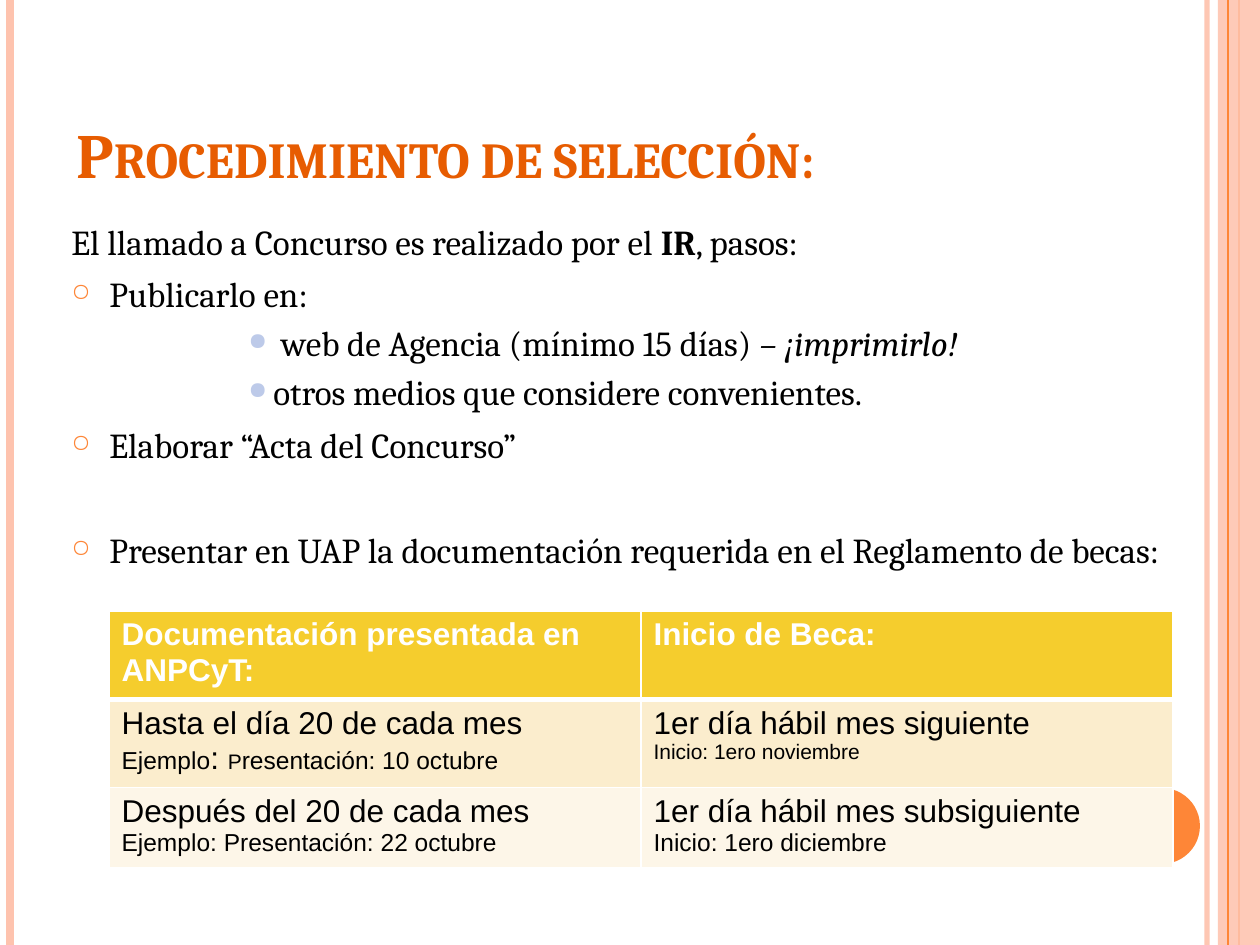
from lxml import etree
from pptx import Presentation
from pptx.dml.color import RGBColor
from pptx.enum.shapes import MSO_CONNECTOR, MSO_SHAPE
from pptx.enum.text import MSO_ANCHOR, MSO_AUTO_SIZE, PP_ALIGN
from pptx.oxml.ns import qn
from pptx.util import Pt

STRAIGHT = MSO_CONNECTOR.STRAIGHT
RECTANGLE, OVAL = MSO_SHAPE.RECTANGLE, MSO_SHAPE.OVAL
BOTTOM, LEFT, NO_FIT = MSO_ANCHOR.BOTTOM, PP_ALIGN.LEFT, MSO_AUTO_SIZE.NONE
PX = 914400 / 126
COLORS = {
    "orange": "FE8637", "pink": "FEC3AE", "title": "E75C01", "text": "000000",
    "white": "FFFFFF", "dot": "BDCAE9", "header": "F5CD2D",
    "odd": "FBEDCD", "even": "FDF6E8",
}


def px(*lengths):
    return [round(length * PX) for length in lengths]


def add_text(paragraph, text, font="Cambria", size=20, color="text",
             bold=False, italic=False, small_caps=False):
    run = paragraph.add_run()
    run.text = text
    run.font.name = font
    run.font.size = Pt(size)
    run.font.bold = bold
    run.font.italic = italic
    run.font.color.rgb = RGBColor.from_string(COLORS[color])
    if small_caps:
        run.font._element.set("cap", "small")


prs = Presentation()
prs.slide_width, prs.slide_height = px(1260, 945)
slide = prs.slides.add_slide(prs.slide_layouts[5])
shapes = slide.shapes

stripes = [(1207, "pink", 3, 93), (10, "pink", 4.5, 100),
           (1239, "orange", 1.5, 100), (1228, "orange", 0.75, 100)]
band_and_disc = [(RECTANGLE, (1218, 0, 42, 945), "pink", 87),
                 (OVAL, (1124, 788, 76, 76), "orange", 100)]
decorations = []
for x, color, width, opacity in stripes[:3]:
    decorations.append(("stripe", x, color, width, opacity))
decorations.append(("area", *band_and_disc[0]))
decorations.append(("stripe", *stripes[3]))
decorations.append(("area", *band_and_disc[1]))

for kind, *details in decorations:
    if kind == "stripe":
        x, color, width, opacity = details
        stripe = shapes.add_connector(STRAIGHT, *px(x, 0, x, 945))
        stripe.line.width = Pt(width)
        paint = stripe.line.fill
        etree.SubElement(stripe._element.spPr, qn("a:effectLst"))
        holder = stripe.line._get_or_add_ln()
    else:
        preset, box, color, opacity = details
        area = shapes.add_shape(preset, *px(*box))
        area.shadow.inherit = False
        area.line.fill.background()
        paint = area.fill
        holder = area._element.spPr
    paint.solid()
    paint.fore_color.rgb = RGBColor.from_string(COLORS[color])
    if opacity < 100:
        tint = holder.find(qn("a:solidFill"))[0]
        etree.SubElement(tint, qn("a:alpha"), val=str(opacity * 1000))

title = shapes.title
title.left, title.top, title.width, title.height = px(64, 39, 1148, 158)
title.text_frame.auto_size = NO_FIT
title.text_frame.word_wrap = True
title.text_frame.vertical_anchor = BOTTOM
heading = title.text_frame.paragraphs[0]
heading.alignment = LEFT
add_text(heading, "Procedimiento de selección:", size=36, color="title",
         bold=True, small_caps=True)

BULLETS = {
    "intro": (38, -38, None, None, None),
    "step": (38, -38, "○", "orange", 70),
    "detail": (202, -25, "●", "dot", 68),
}
steps = [
    ("intro", 6, [("El llamado a Concurso es realizado por el ", {}),
                  ("IR", {"bold": True}), (", pasos:", {})]),
    ("step", 6, [("Publicarlo en:", {})]),
    ("detail", 4, [(" web de Agencia (mínimo 15 días) ", {}),
                   ("– ¡imprimirlo!", {"italic": True})]),
    ("detail", 4, [("otros medios que considere convenientes.", {})]),
    ("step", 6, [("Elaborar “Acta del Concurso”", {})]),
    ("step", 36, [("Presentar en UAP la documentación requerida en el "
                   "Reglamento de becas:", {})]),
]
body = shapes.add_textbox(*px(59, 214, 1148, 682)).text_frame
body.word_wrap = True
for i, (level, gap, runs) in enumerate(steps):
    paragraph = body.add_paragraph() if i else body.paragraphs[0]
    paragraph.space_before = Pt(gap)
    margin, indent, mark, mark_color, mark_size = BULLETS[level]
    pPr = paragraph._p.get_or_add_pPr()
    pPr.set("marL", str(px(margin)[0]))
    pPr.set("indent", str(px(indent)[0]))
    if mark:
        tint = etree.SubElement(pPr, qn("a:buClr"))
        etree.SubElement(tint, qn("a:srgbClr"), val=COLORS[mark_color])
        etree.SubElement(pPr, qn("a:buSzPct"), val=str(mark_size * 1000))
        etree.SubElement(pPr, qn("a:buChar"), char=mark)
    for text, style in runs:
        add_text(paragraph, text, **style)

deadlines = [
    [[[("Documentación presentada en ANPCyT:", 18)]],
     [[("Inicio de Beca:", 18)]]],
    [[[("Hasta el día 20 de cada mes", 18)],
      [("Ejemplo", 14), (": ", 18), ("P", 12), ("resentación: 10 octubre", 14)]],
     [[("1er día hábil mes siguiente", 18)], [("Inicio: 1ero noviembre", 12)]]],
    [[[("Después del 20 de cada mes", 18)],
      [("Ejemplo: Presentación: 22 octubre", 14)]],
     [[("1er día hábil mes subsiguiente", 18)], [("Inicio: 1ero diciembre", 14)]]],
]
table = shapes.add_table(3, 2, *px(109, 611, 1064, 256)).table
for column in table.columns:
    column.width = px(532)[0]
for r, (height, fill) in enumerate([(88, "header"), (88, "odd"), (80, "even")]):
    table.rows[r].height = px(height)[0]
    for c, lines in enumerate(deadlines[r]):
        cell = table.cell(r, c)
        cell.fill.solid()
        cell.fill.fore_color.rgb = RGBColor.from_string(COLORS[fill])
        tcPr = cell._tc.get_or_add_tcPr()
        for i, side in enumerate(["lnL", "lnR", "lnT", "lnB"]):
            thick = (r, side) in [(0, "lnB"), (1, "lnT")]
            border = etree.Element(qn(f"a:{side}"), w=str(Pt(3 if thick else 1)))
            paint = etree.SubElement(border, qn("a:solidFill"))
            etree.SubElement(paint, qn("a:srgbClr"), val=COLORS["white"])
            tcPr.insert(i, border)
        for i, runs in enumerate(lines):
            frame = cell.text_frame
            paragraph = frame.add_paragraph() if i else frame.paragraphs[0]
            for text, size in runs:
                add_text(paragraph, text, font="Arial", size=size, bold=r == 0,
                         color="text" if r else "white")

prs.save("out.pptx")
